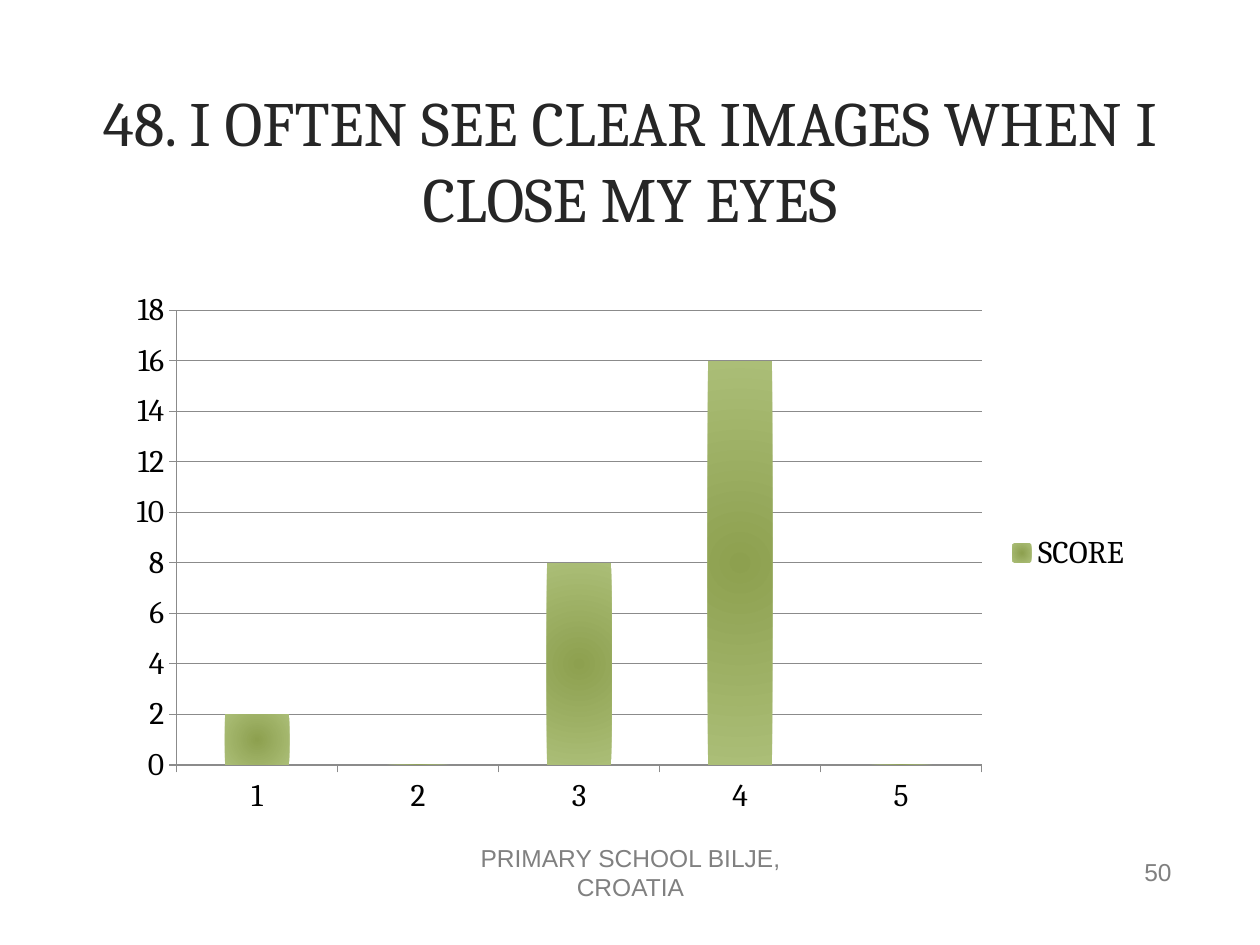
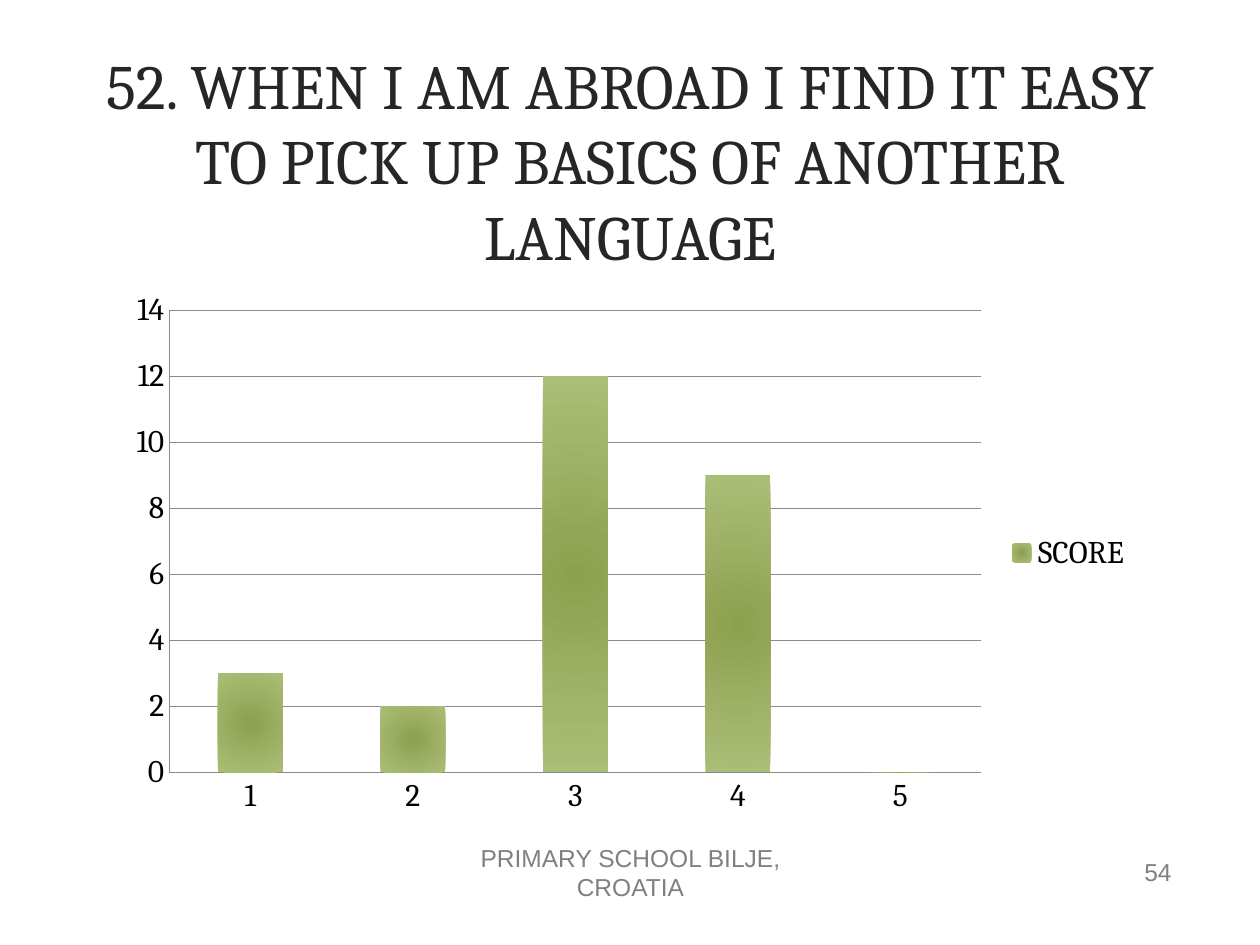
import lxml.etree
import pptx
import pptx.chart.data
import pptx.dml.color
import pptx.enum.chart
import pptx.enum.text
import pptx.oxml.ns
import pptx.util

PX = 914400 / 126
INK = "262626"
GREY = "808080"
BLACK = "000000"
AXIS_GREY = "8B8B8B"
BAR_CENTRE = "8DA04F"
BAR_EDGE = "ABBE77"

TITLE_BOX = (76, 60, 1108, 199)
CHART_BOX = (116, 281, 1029, 544)
FOOTER_BOX = (431, 847, 399, 50)
NUMBER_BOX = (890, 847, 294, 50)

FOOTER = "PRIMARY SCHOOL BILJE, CROATIA"
CATEGORIES = ["1", "2", "3", "4", "5"]
TICK = pptx.enum.chart.XL_TICK_MARK
ALIGN = pptx.enum.text.PP_ALIGN

QUESTIONS = [
    ("48. I OFTEN SEE CLEAR IMAGES WHEN I CLOSE MY EYES",
     (2, 0, 8, 16, 0), 18, TICK.OUTSIDE, "50"),
    ("52. WHEN I AM ABROAD I FIND IT EASY TO PICK UP BASICS OF ANOTHER LANGUAGE",
     (3, 2, 12, 9, 0), 14, TICK.NONE, "54"),
]


def color(value):
    return pptx.dml.color.RGBColor.from_string(value)


def emu(box):
    return [pptx.util.Emu(round(length * PX)) for length in box]


def set_font(font, name, size, value):
    font.name = name
    font.size = pptx.util.Pt(size)
    font.color.rgb = color(value)


def add_text(slide, box, text, name, size, value, alignment):
    frame = slide.shapes.add_textbox(*emu(box)).text_frame
    frame.word_wrap = True
    frame.vertical_anchor = pptx.enum.text.MSO_ANCHOR.MIDDLE
    paragraph = frame.paragraphs[0]
    paragraph.alignment = alignment
    run = paragraph.add_run()
    run.text = text
    set_font(run.font, name, size, value)


def fill_bars(series):
    fill = series.format.fill
    fill.gradient()
    for stop, value in zip(fill.gradient_stops, (BAR_CENTRE, BAR_EDGE)):
        stop.color.rgb = color(value)
    qn = pptx.oxml.ns.qn
    gradient = next(series._element.iter(qn("a:gradFill")))
    gradient.remove(gradient.find(qn("a:lin")))
    radial = lxml.etree.SubElement(gradient, qn("a:path"), path="circle")
    lxml.etree.SubElement(radial, qn("a:fillToRect"),
                          l="50000", t="50000", r="50000", b="50000")


def style_line(line):
    line.color.rgb = color(AXIS_GREY)
    line.width = pptx.util.Pt(0.75)


def add_score_chart(slide, box, scores, maximum, tick):
    data = pptx.chart.data.CategoryChartData()
    data.categories = CATEGORIES
    data.add_series("SCORE", scores)
    chart = slide.shapes.add_chart(
        pptx.enum.chart.XL_CHART_TYPE.COLUMN_CLUSTERED, *emu(box), data).chart
    set_font(chart.font, "Cambria", 18, BLACK)
    chart.has_title = False
    chart.has_legend = True
    chart.legend.position = pptx.enum.chart.XL_LEGEND_POSITION.RIGHT
    chart.legend.include_in_layout = False
    plot = chart.plots[0]
    plot.gap_width = 150
    plot.vary_by_categories = False
    fill_bars(plot.series[0])
    for axis in (chart.category_axis, chart.value_axis):
        axis.major_tick_mark = tick
        axis.minor_tick_mark = TICK.NONE
        style_line(axis.format.line)
    values = chart.value_axis
    values.minimum_scale = 0
    values.maximum_scale = maximum
    values.major_unit = 2
    values.has_major_gridlines = True
    style_line(values.major_gridlines.format.line)


def add_footer(slide, number):
    add_text(slide, FOOTER_BOX, FOOTER, "Arial", 14, GREY, ALIGN.CENTER)
    add_text(slide, NUMBER_BOX, number, "Arial", 14, GREY, ALIGN.RIGHT)


def add_question_slide(presentation, title, scores, maximum, tick, number):
    slide = presentation.slides.add_slide(presentation.slide_layouts[6])
    add_text(slide, TITLE_BOX, title, "Cambria", 36, INK, ALIGN.CENTER)
    add_score_chart(slide, CHART_BOX, scores, maximum, tick)
    add_footer(slide, number)


def main():
    presentation = pptx.Presentation()
    presentation.slide_width = pptx.util.Inches(10)
    presentation.slide_height = pptx.util.Inches(7.5)
    for question in QUESTIONS:
        add_question_slide(presentation, *question)
    presentation.save("out.pptx")


if __name__ == "__main__":
    main()
